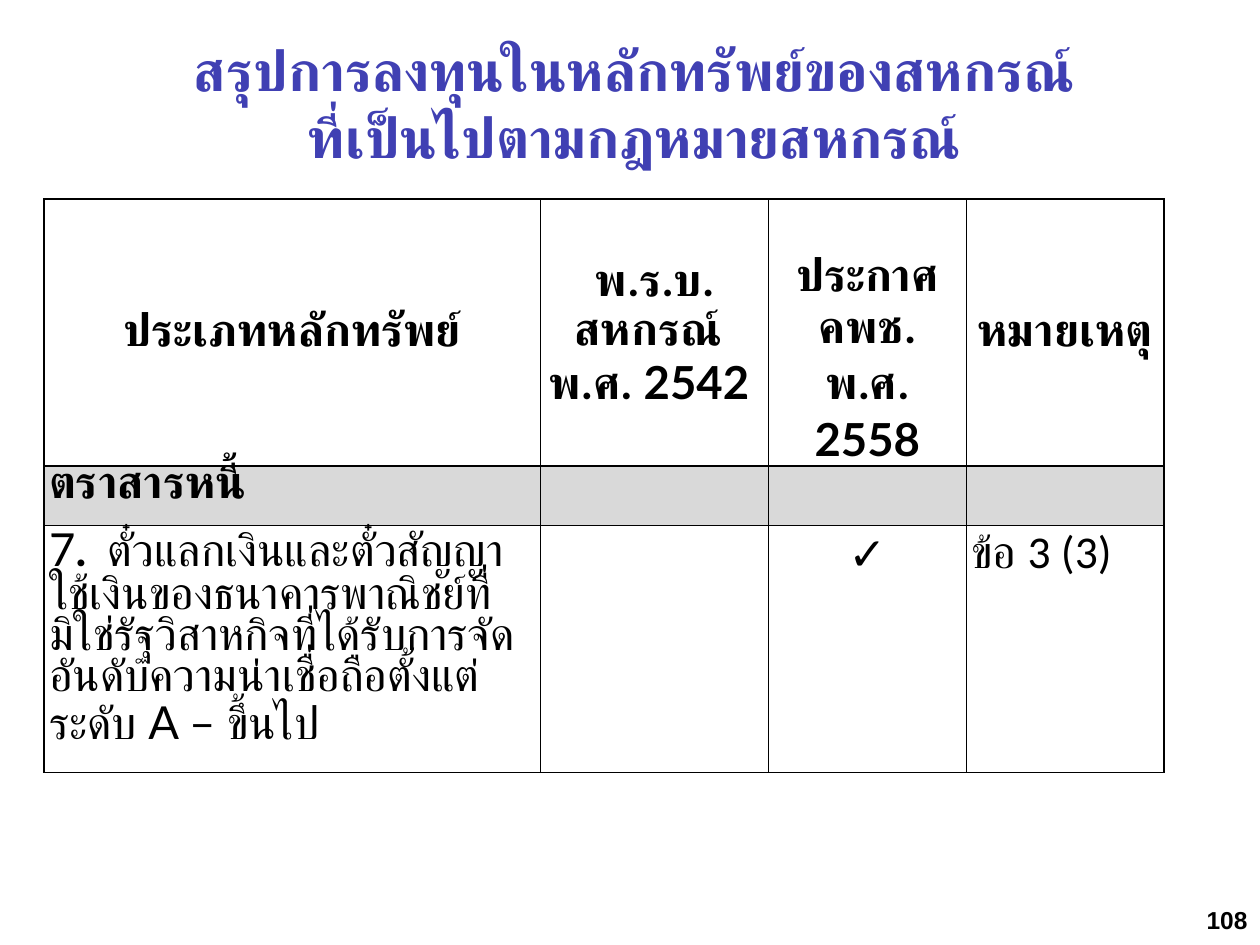
import pptx
import pptx.util
import pptx.dml.color
import pptx.enum.text
import pptx.oxml
import pptx.oxml.ns

COLORS = {"title": "4040B3", "text": "000000", "section": "D9D9D9", "border": "000000"}
ALIGN = pptx.enum.text.PP_ALIGN
ANCHOR = pptx.enum.text.MSO_ANCHOR
Inches = pptx.util.Inches

TITLE_BOX = (0.13, 0.23, 9.81, 1.18)
TABLE_BOX = (0.35, 1.58, 8.89, 4.55)
NUMBER_BOX = (7.67, 7.1, 2.33, 0.4)
COLUMN_WIDTHS = (3.94, 1.81, 1.57, 1.57)
ROW_HEIGHTS = (2.12, 0.47, 1.96)

HEADER = {"name": "Calibri", "size": pptx.util.Pt(26), "bold": True}
HEADER_LATIN = {**HEADER, "name": "Lato"}
BODY = {**HEADER, "bold": False}
BODY_LATIN = {**BODY, "name": "Lato"}
TITLE = {"name": "Lato", "size": pptx.util.Pt(32), "bold": True}
NUMBER = {"name": "Arial", "size": pptx.util.Pt(14), "bold": True}

# Each cell: column, anchor, alignment, line spacing, paragraphs of (text, format) runs
HEADER_CELLS = [
    (0, ANCHOR.MIDDLE, ALIGN.CENTER, 1.0, [[("ประเภทหลักทรัพย์", HEADER)]]),
    (1, ANCHOR.MIDDLE, ALIGN.CENTER, 1.0,
     [[("พ.ร.บ. สหกรณ์ ", HEADER)], [("พ.ศ.", HEADER), (" 2542 ", HEADER_LATIN)]]),
    (2, ANCHOR.BOTTOM, ALIGN.CENTER, 1.0,
     [[("ประกาศ คพช.", HEADER)], [("พ.ศ. ", HEADER), ("2558", HEADER_LATIN)]]),
    (3, ANCHOR.MIDDLE, ALIGN.CENTER, 1.0, [[("หมายเหตุ", HEADER)]]),
]
SECTION_CELLS = [(0, ANCHOR.TOP, ALIGN.LEFT, 0.9, [[("ตราสารหนี้", HEADER)]])]
SECURITY_CELLS = [
    (0, ANCHOR.TOP, ALIGN.LEFT, 0.9, [[
        ("7", BODY_LATIN), (". ", HEADER_LATIN),
        (" ตั๋วแลกเงินและตั๋วสัญญาใช้เงินของธนาคารพาณิชย์ที่มิใช่รัฐวิสาหกิจ"
         "ที่ได้รับการจัดอันดับความน่าเชื่อถือตั้งแต่ระดับ ", BODY),
        ("A – ขึ้นไป", BODY_LATIN)]]),
    (2, ANCHOR.TOP, ALIGN.CENTER, 1.0, [[("✓", BODY_LATIN)]]),
    (3, ANCHOR.TOP, ALIGN.LEFT, 1.0, [[("ข้อ 3 (3)", BODY)]]),
]


def write_paragraphs(text_frame, paragraphs, alignment, spacing=1.0, color="text"):
    for index, runs in enumerate(paragraphs):
        paragraph = text_frame.add_paragraph() if index else text_frame.paragraphs[0]
        paragraph.alignment = alignment
        paragraph.line_spacing = spacing
        for text, font_format in runs:
            run = paragraph.add_run()
            run.text = text
            for name, value in font_format.items():
                setattr(run.font, name, value)
            run.font.color.rgb = pptx.dml.color.RGBColor.from_string(COLORS[color])


def add_borders(cell):
    properties = cell._tc.get_or_add_tcPr()
    for index, side in enumerate(("lnL", "lnR", "lnT", "lnB")):
        line = pptx.oxml.parse_xml(
            f'<a:{side} {pptx.oxml.ns.nsdecls("a")} w="12700"><a:solidFill>'
            f'<a:srgbClr val="{COLORS["border"]}"/></a:solidFill></a:{side}>')
        properties.insert(index, line)


def add_title(slide, box):
    title = slide.shapes.title
    title.left, title.top, title.width, title.height = map(Inches, box)
    title.text_frame.vertical_anchor = ANCHOR.TOP
    lines = ("สรุปการลงทุนในหลักทรัพย์ของสหกรณ์", "ที่เป็นไปตามกฎหมายสหกรณ์")
    write_paragraphs(title.text_frame, [[(line, TITLE)] for line in lines],
                     ALIGN.CENTER, color="title")


def add_securities_table(slide, box):
    rows = (HEADER_CELLS, SECTION_CELLS, SECURITY_CELLS)
    table = slide.shapes.add_table(len(rows), len(COLUMN_WIDTHS), *map(Inches, box)).table
    table.first_row = table.horz_banding = False
    for column, width in zip(table.columns, COLUMN_WIDTHS):
        column.width = Inches(width)
    for row, height in zip(table.rows, ROW_HEIGHTS):
        row.height = Inches(height)

    # Plain cells with thin borders; the section row is shaded
    margins = {"margin_left": 0.04, "margin_right": 0.04, "margin_top": 0, "margin_bottom": 0}
    for row, contents in zip(table.rows, rows):
        for cell in row.cells:
            for name, value in margins.items():
                setattr(cell, name, Inches(value))
            if contents is SECTION_CELLS:
                cell.fill.solid()
                cell.fill.fore_color.rgb = pptx.dml.color.RGBColor.from_string(COLORS["section"])
            else:
                cell.fill.background()
            add_borders(cell)
        for column, anchor, alignment, spacing, paragraphs in contents:
            cell = row.cells[column]
            cell.vertical_anchor = anchor
            write_paragraphs(cell.text_frame, paragraphs, alignment, spacing)


def add_page_number(slide, box):
    text_frame = slide.shapes.add_textbox(*map(Inches, box)).text_frame
    text_frame.word_wrap = True
    text_frame.vertical_anchor = ANCHOR.MIDDLE
    write_paragraphs(text_frame, [[("108", NUMBER)]], ALIGN.RIGHT)


def main():
    presentation = pptx.Presentation()
    presentation.slide_width = Inches(10)
    presentation.slide_height = Inches(7.5)
    slide = presentation.slides.add_slide(presentation.slide_layouts.get_by_name("Title Only"))
    add_title(slide, TITLE_BOX)
    add_securities_table(slide, TABLE_BOX)
    add_page_number(slide, NUMBER_BOX)
    presentation.save("out.pptx")


if __name__ == "__main__":
    main()
